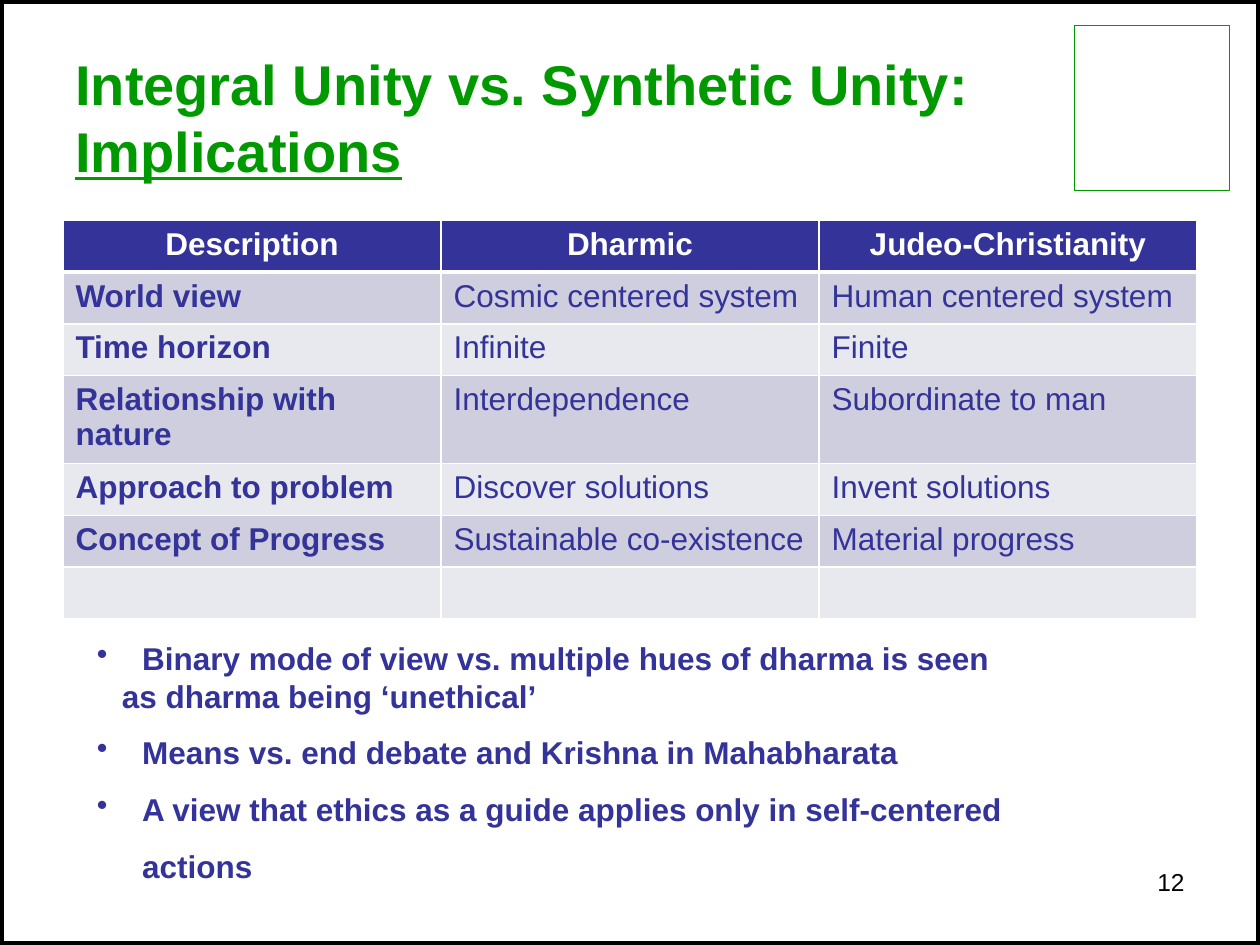
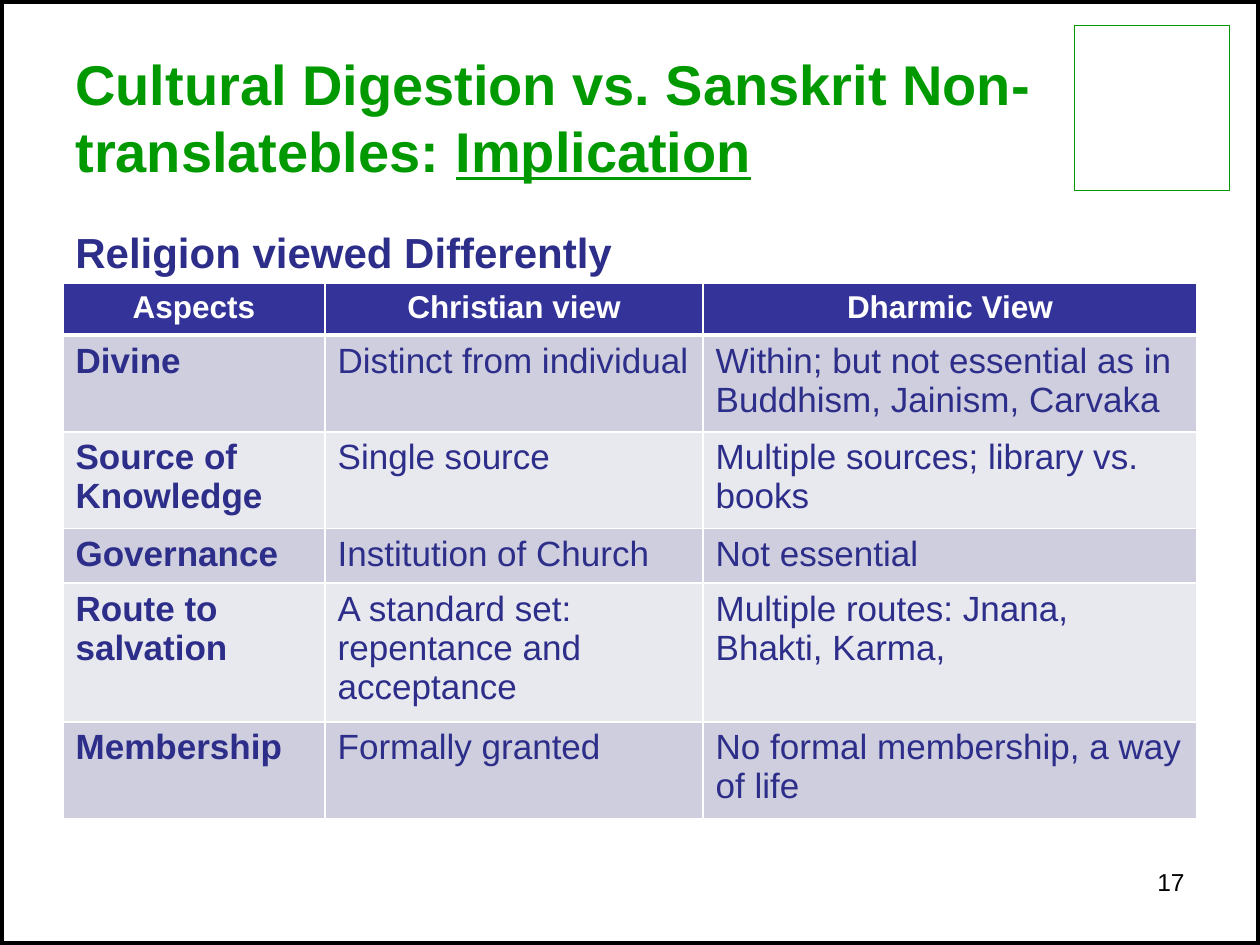
import pptx
import pptx.util
import pptx.dml.color
import pptx.enum.shapes
import pptx.enum.text
import pptx.oxml
import pptx.oxml.ns
from pptx.util import Inches

COLORS = {
    "heading": "009900",
    "primary": "333399",
    "deep": "2D2D8A",
    "band_dark": "CECEDE",
    "band_light": "E8E8EF",
    "white": "FFFFFF",
    "black": "000000",
}


class Deck:
    """Holds the shared style and draws each kind of element on the current slide."""

    font = "Arial"
    margin = 0.5
    width = 9

    def __init__(self):
        self.presentation = pptx.Presentation()
        self.presentation.slide_width = Inches(10)
        self.presentation.slide_height = Inches(7.5)
        self.slide = None

    def color(self, name):
        return pptx.dml.color.RGBColor.from_string(COLORS[name])

    def style(self, paragraph, size, color, bold=False, align="LEFT"):
        paragraph.font.name = self.font
        paragraph.font.size = pptx.util.Pt(size)
        paragraph.font.bold = bold
        paragraph.font.color.rgb = self.color(color)
        paragraph.alignment = getattr(pptx.enum.text.PP_ALIGN, align)

    def new_slide(self, heading, underlined, number):
        self.slide = self.presentation.slides.add_slide(self.presentation.slide_layouts[6])
        self.frame(0, 0, 10, 7.5, "black", 4.5)
        self.frame(8.53, 0.2, 1.23, 1.31, "heading", 0.75)
        self.title(heading, underlined)
        page = self.text_frame(7.17, 6.83, 2.33, 0.52).paragraphs[0]
        page.text = str(number)
        self.style(page, 14, "black", align="RIGHT")

    def frame(self, left, top, width, height, color, weight):
        border = self.slide.shapes.add_shape(
            pptx.enum.shapes.MSO_SHAPE.RECTANGLE,
            Inches(left), Inches(top), Inches(width), Inches(height))
        border.shadow.inherit = False
        border.fill.background()
        border.line.color.rgb = self.color(color)
        border.line.width = pptx.util.Pt(weight)

    def text_frame(self, left, top, width, height):
        box = self.slide.shapes.add_textbox(
            Inches(left), Inches(top), Inches(width), Inches(height))
        box.text_frame.word_wrap = True
        return box.text_frame

    def title(self, heading, underlined):
        frame = self.text_frame(self.margin, 0.3, 7.83, 1.25)
        frame.vertical_anchor = pptx.enum.text.MSO_ANCHOR.MIDDLE
        paragraph = frame.paragraphs[0]
        paragraph.add_run().text = heading + " "
        emphasis = paragraph.add_run()
        emphasis.text = underlined
        emphasis.font.underline = True
        self.style(paragraph, 32, "heading", bold=True)

    def subtitle(self, text, top):
        paragraph = self.text_frame(self.margin, top, 4.5, 0.5).paragraphs[0]
        paragraph.text = text
        self.style(paragraph, 24, "deep", bold=True)

    def bullets(self, left, top, width, height, items):
        frame = self.text_frame(left, top, width, height)
        for index, (text, has_bullet, spacing) in enumerate(items):
            paragraph = frame.paragraphs[0] if index == 0 else frame.add_paragraph()
            paragraph.text = text
            paragraph.line_spacing = spacing
            self.style(paragraph, 18, "primary", bold=True)
            indent = Inches(0.36 if has_bullet else 0.2)
            properties = paragraph._p.get_or_add_pPr()
            properties.set("marL", str(indent))
            if has_bullet:
                properties.set("indent", str(-indent))
                bullet = pptx.oxml.parse_xml(
                    f'<a:buChar {pptx.oxml.ns.nsdecls("a")} char="•"/>')
                properties.insert_element_before(bullet, "a:tabLst", "a:defRPr", "a:extLst")

    def cell_borders(self, cell, row):
        weights = {"lnL": 1, "lnR": 1, "lnT": 3 if row == 1 else 1, "lnB": 3 if row == 0 else 1}
        properties = cell._tc.get_or_add_tcPr()
        for position, (side, weight) in enumerate(weights.items()):
            properties.insert(position, pptx.oxml.parse_xml(
                f'<a:{side} {pptx.oxml.ns.nsdecls("a")} w="{pptx.util.Pt(weight)}">'
                f'<a:solidFill><a:srgbClr val="{COLORS["white"]}"/></a:solidFill></a:{side}>'))

    def table(self, top, column_widths, rows, size, color):
        row_height = Inches(0.41)
        table = self.slide.shapes.add_table(
            len(rows), len(column_widths), Inches(self.margin), Inches(top),
            Inches(self.width), row_height * len(rows)).table
        for column, width in zip(table.columns, column_widths):
            column.width = Inches(width)
        for row, texts in enumerate(rows):
            table.rows[row].height = row_height
            band = "primary" if row == 0 else "band_dark" if row % 2 else "band_light"
            for column, text in enumerate(texts):
                cell = table.cell(row, column)
                cell.fill.solid()
                cell.fill.fore_color.rgb = self.color(band)
                self.cell_borders(cell, row)
                paragraph = cell.text_frame.paragraphs[0]
                paragraph.text = text
                if row == 0:
                    self.style(paragraph, 18, "white", bold=True, align="CENTER")
                else:
                    self.style(paragraph, size, color, bold=column == 0)


def main():
    deck = Deck()

    deck.new_slide("Integral Unity vs. Synthetic Unity:", "Implications", 12)
    unity_rows = [
        ("Description", "Dharmic", "Judeo-Christianity"),
        ("World view", "Cosmic centered system", "Human centered system"),
        ("Time horizon", "Infinite", "Finite"),
        ("Relationship with nature", "Interdependence", "Subordinate to man"),
        ("Approach to problem", "Discover solutions", "Invent solutions"),
        ("Concept of Progress", "Sustainable co-existence", "Material progress"),
        ("", "", ""),
    ]
    deck.table(1.75, (3, 3, 3), unity_rows, 18, "primary")
    deck.bullets(0.67, 5.02, 8.26, 1.62, [
        ("Binary mode of view vs. multiple hues of dharma is seen", True, 1),
        ("as dharma being ‘unethical’", False, 1),
        ("Means vs. end debate and Krishna in Mahabharata", True, 1.5),
        ("A view that ethics as a guide applies only in self-centered actions", True, 1.5),
    ])

    deck.new_slide("Cultural Digestion vs. Sanskrit Non-translatebles:", "Implication", 17)
    religion_rows = [
        ("Aspects", "Christian view", "Dharmic View"),
        ("Divine", "Distinct from individual",
         "Within; but not essential as in Buddhism, Jainism, Carvaka"),
        ("Source of Knowledge", "Single source", "Multiple sources; library vs. books"),
        ("Governance", "Institution of Church", "Not essential"),
        ("Route to salvation", "A standard set: repentance and acceptance",
         "Multiple routes: Jnana, Bhakti, Karma,"),
        ("Membership", "Formally granted", "No formal membership, a way of life"),
    ]
    deck.table(2.25, (2.08, 3, 3.92), religion_rows, 20, "deep")
    deck.subtitle("Religion viewed Differently", 1.75)

    deck.presentation.save("out.pptx")


if __name__ == "__main__":
    main()
